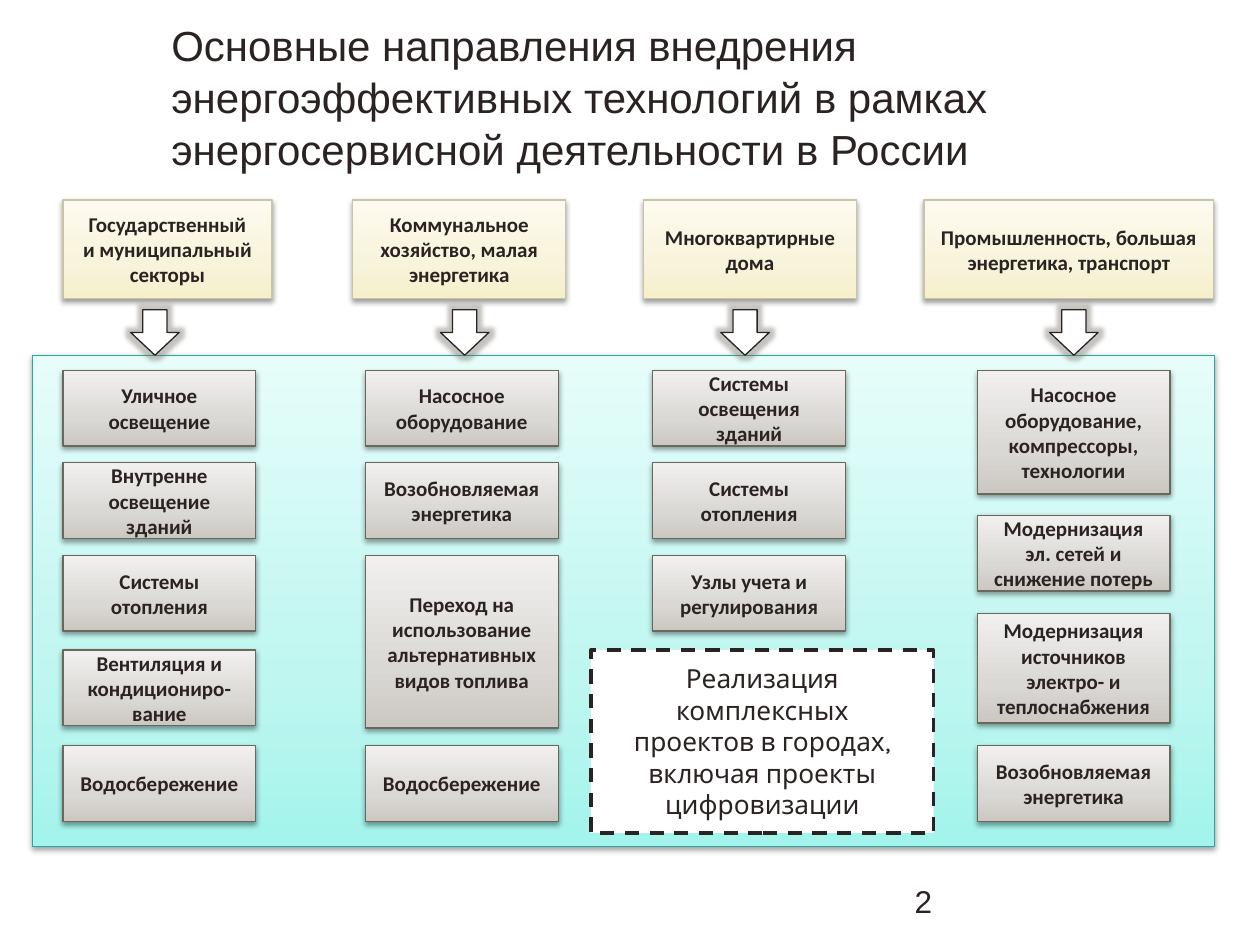
from copy import deepcopy

from lxml.etree import SubElement
from pptx import Presentation
from pptx.dml.color import RGBColor
from pptx.enum.dml import MSO_LINE
from pptx.enum.shapes import MSO_SHAPE
from pptx.enum.text import MSO_ANCHOR, PP_ALIGN
from pptx.oxml.ns import qn
from pptx.util import Pt

INK = RGBColor(0x2B, 0x22, 0x22)
WHITE = RGBColor(0xFF, 0xFF, 0xFF)
BLACK = RGBColor(0x00, 0x00, 0x00)
GLOW = RGBColor(0x6B, 0x67, 0x5D)
TEAL_LINE = RGBColor(0x2A, 0xA7, 0x9F)
TEAL = (RGBColor(0xA3, 0xF4, 0xEC), RGBColor(0xBF, 0xF6, 0xF0), RGBColor(0xE6, 0xFD, 0xFA))
CREAM_LINE = RGBColor(0xC9, 0xC4, 0xA5)
CREAM = (RGBColor(0xF6, 0xEF, 0xCC), RGBColor(0xF8, 0xF3, 0xDB), RGBColor(0xFD, 0xFB, 0xF0))
GREY_LINE = RGBColor(0x6B, 0x67, 0x5D)
GREY = (RGBColor(0xCB, 0xC8, 0xC2), RGBColor(0xDA, 0xD8, 0xD4), RGBColor(0xF1, 0xF0, 0xEF))

STOPS = (0, 0.35, 1)
ROWS = (211.7, 264.5, 317.5, 371.5, 426.2)
CARD_WIDTH, CARD_HEIGHT = 110.2, 43.2
HEADER_TOP, HEADER_HEIGHT = 114.3, 56.2
ARROW_TOP, ARROW_WIDTH, ARROW_HEIGHT = 177, 27.7, 26

SECTORS = [
    {
        "header": ("Государственный\vи муниципальный секторы", 36, 119.5),
        "arrow": 74.7,
        "left": 36,
        "cards": [
            ("Уличное освещение", ROWS[0], CARD_HEIGHT),
            ("Внутренне освещение зданий", ROWS[1], CARD_HEIGHT),
            ("Системы отопления", ROWS[2], CARD_HEIGHT),
            ("Вентиляция и кондициониро-вание", ROWS[3], CARD_HEIGHT),
            ("Водосбережение", ROWS[4], CARD_HEIGHT),
        ],
    },
    {
        "header": ("Коммунальное хозяйство, малая энергетика", 201.6, 121.7),
        "arrow": 251.7,
        "left": 208.8,
        "cards": [
            ("Насосное оборудование", ROWS[0], CARD_HEIGHT),
            ("Возобновляемая энергетика", ROWS[1], CARD_HEIGHT),
            ("Переход на использование альтернативных видов топлива", ROWS[2], 98.6),
            ("Водосбережение", ROWS[4], CARD_HEIGHT),
        ],
    },
    {
        "header": ("Многоквартирные дома", 367.7, 121.7),
        "arrow": 411.9,
        "left": 373,
        "cards": [
            ("Системы освещения зданий", ROWS[0], CARD_HEIGHT),
            ("Системы отопления", ROWS[1], CARD_HEIGHT),
            ("Узлы учета и регулирования", ROWS[2], CARD_HEIGHT),
        ],
    },
    {
        "header": ("Промышленность, большая энергетика, транспорт", 528, 165.6),
        "arrow": 599.8,
        "left": 558.4,
        "cards": [
            ("Насосное оборудование, компрессоры, технологии", ROWS[0], 70.6),
            ("Модернизация эл. сетей и снижение потерь", 294.5, CARD_HEIGHT),
            ("Модернизация источников электро- и теплоснабжения", 350.6, 62.6),
            ("Возобновляемая энергетика", ROWS[4], CARD_HEIGHT),
        ],
    },
]


def set_insets(frame, side, edge):
    frame.margin_left = frame.margin_right = Pt(side)
    frame.margin_top = frame.margin_bottom = Pt(edge)


def write_text(frame, text, size, font, align, bold=False):
    frame.word_wrap = True
    frame.vertical_anchor = MSO_ANCHOR.MIDDLE
    frame.text = text
    for para in frame.paragraphs:
        para.alignment = align
        for span in para.runs:
            span.font.size = Pt(size)
            span.font.name = font
            span.font.bold = bold
            span.font.color.rgb = INK
        for line_break in para._p.findall(qn("a:br")):
            line_break.append(deepcopy(para.runs[0]._r.rPr))


def add_effect(shape, kind, color, alpha, **settings):
    shape.shadow.inherit = False
    effects = shape._element.spPr.find(qn("a:effectLst"))
    effect = SubElement(effects, qn(kind), {key: str(value) for key, value in settings.items()})
    tint = SubElement(effect, qn("a:srgbClr"), val=str(color))
    SubElement(tint, qn("a:alpha"), val=str(alpha * 1000))


def add_box(shapes, kind, left, top, width, height, line_color, line_width=0.75):
    box = shapes.add_shape(kind, Pt(left), Pt(top), Pt(width), Pt(height))
    box.shadow.inherit = False
    box.fill.solid()
    box.fill.fore_color.rgb = WHITE
    box.line.color.rgb = line_color
    box.line.width = Pt(line_width)
    return box


def add_shaded_box(shapes, left, top, width, height, colors, line_color):
    box = add_box(shapes, MSO_SHAPE.RECTANGLE, left, top, width, height, line_color)
    box.fill.gradient()
    box.fill.gradient_angle = 90
    stop_list = box._element.spPr.find(qn("a:gradFill")).find(qn("a:gsLst"))
    stop_list.append(deepcopy(stop_list[0]))
    for stop, position, color in zip(box.fill.gradient_stops, STOPS, colors):
        stop.position = position
        stop.color.rgb = color
    add_effect(box, "a:outerShdw", BLACK, 38, blurRad=Pt(3.1), dist=Pt(1.6),
               dir=5400000, rotWithShape=0)
    return box


def add_label_box(shapes, text, left, top, width, height, colors, line_color):
    box = add_shaded_box(shapes, left, top, width, height, colors, line_color)
    set_insets(box.text_frame, 7.7, 4)
    write_text(box.text_frame, text, 12, "Calibri", PP_ALIGN.CENTER, bold=True)


def add_sector(shapes, sector):
    text, left, width = sector["header"]
    add_label_box(shapes, text, left, HEADER_TOP, width, HEADER_HEIGHT, CREAM, CREAM_LINE)
    arrow = add_box(shapes, MSO_SHAPE.DOWN_ARROW, sector["arrow"], ARROW_TOP,
                    ARROW_WIDTH, ARROW_HEIGHT, INK)
    add_effect(arrow, "a:glow", GLOW, 40, rad=Pt(5))
    for text, top, height in sector["cards"]:
        add_label_box(shapes, text, sector["left"], top, CARD_WIDTH, height, GREY, GREY_LINE)


def add_summary(shapes):
    box = add_box(shapes, MSO_SHAPE.RECTANGLE, 337.7, 371.5, 195.8, 104.4, INK, 2)
    box.line.dash_style = MSO_LINE.DASH
    write_text(box.text_frame,
               "Реализация комплексных\vпроектов в городах,\vвключая проекты\vцифровизации",
               15, "Karla", PP_ALIGN.CENTER)


def add_title(page):
    title = page.shapes.title
    title.left, title.top, title.width, title.height = Pt(91.4), Pt(7.9), Pt(648), Pt(93.6)
    set_insets(title.text_frame, 6.5, 3)
    write_text(title.text_frame,
               "Основные направления внедрения\vэнергоэффективных технологий в рамках "
               "энергосервисной деятельности в России",
               24, "Arial", PP_ALIGN.LEFT)
    title.text_frame.paragraphs[0].line_spacing = 1.04


def add_page_number(page):
    box = page.shapes.add_textbox(Pt(516.2), Pt(500.4), Pt(167.8), Pt(28.8))
    set_insets(box.text_frame, 6.5, 3)
    write_text(box.text_frame, "2", 18, "Arial", PP_ALIGN.LEFT)


def main():
    deck = Presentation()
    deck.slide_width, deck.slide_height = Pt(720), Pt(540)
    page = deck.slides.add_slide(deck.slide_layouts[5])
    add_title(page)
    shapes = page.shapes.add_group_shape().shapes
    add_shaded_box(shapes, 18.7, 203, 675.4, 280.8, TEAL, TEAL_LINE)
    for sector in SECTORS:
        add_sector(shapes, sector)
    add_summary(shapes)
    add_page_number(page)
    deck.save("out.pptx")


if __name__ == "__main__":
    main()
